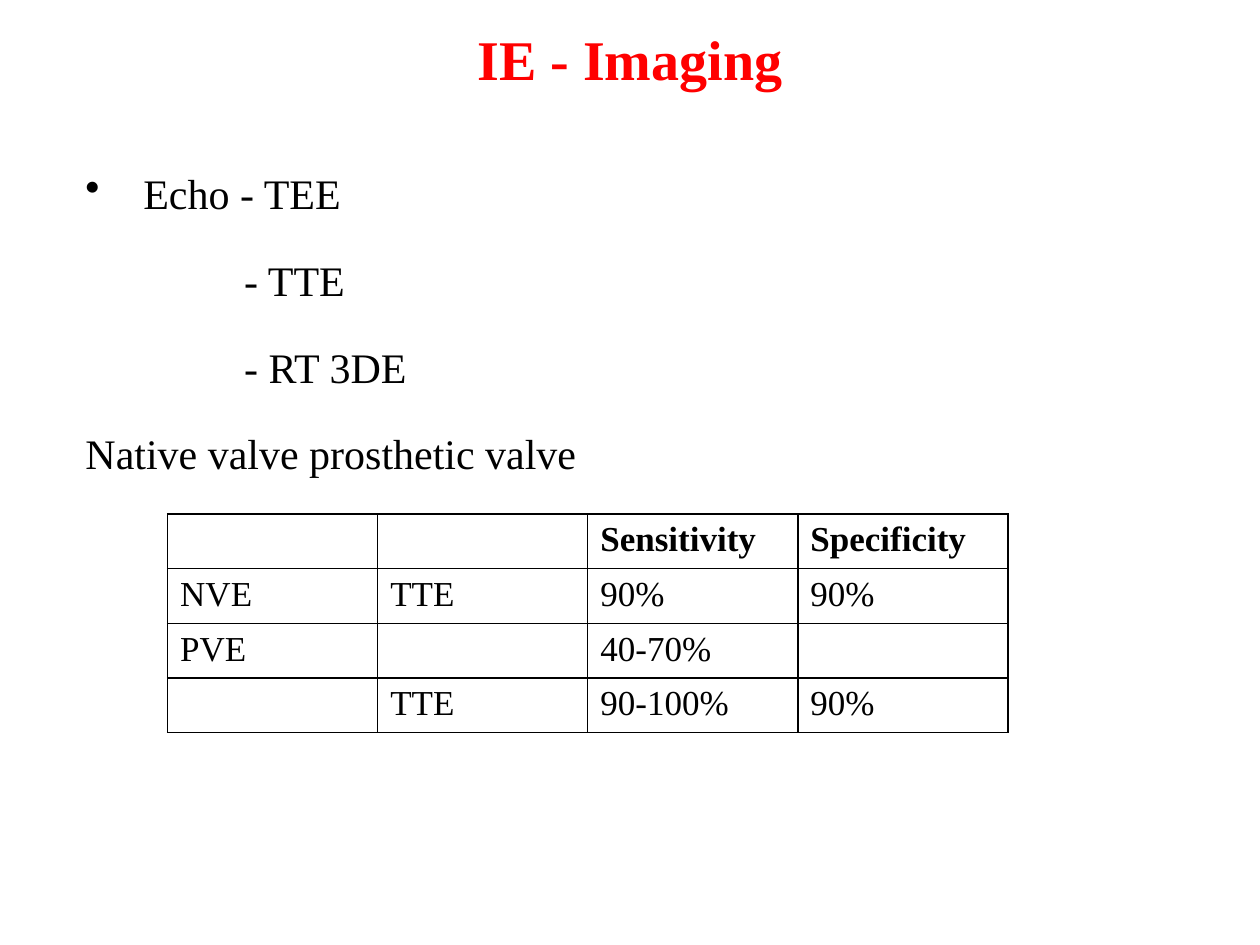
from dataclasses import dataclass

from lxml.etree import SubElement
from pptx import Presentation
from pptx.dml.color import RGBColor
from pptx.enum.text import MSO_ANCHOR, PP_ALIGN
from pptx.oxml.ns import qn
from pptx.util import Inches, Pt


@dataclass(frozen=True)
class Theme:
    font: str = "Times New Roman"
    heading: str = "FF0000"
    ink: str = "000000"
    paper: str = "FFFFFF"
    title_size: float = 32
    body_size: float = 24
    table_size: float = 20
    border_width: float = 1


def write(paragraph, text, *, font, size, color, bold=False,
          align=PP_ALIGN.LEFT, line_spacing=None, space_before=None):
    """Put formatted text in a paragraph."""
    paragraph.alignment = align
    if line_spacing is not None:
        paragraph.line_spacing = line_spacing
    if space_before is not None:
        paragraph.space_before = Pt(space_before)
    run = paragraph.add_run()
    run.text = text
    run.font.name = font
    run.font.size = Pt(size)
    run.font.bold = bold
    run.font.color.rgb = RGBColor.from_string(color)


class SlideBuilder:
    def __init__(self, slide, theme):
        self.slide = slide
        self.theme = theme
        slide.background.fill.solid()
        slide.background.fill.fore_color.rgb = RGBColor.from_string(theme.paper)

    def title(self, text, left, top, width, height):
        heading = self.slide.shapes.title
        heading.left, heading.top = Inches(left), Inches(top)
        heading.width, heading.height = Inches(width), Inches(height)
        heading.text_frame.vertical_anchor = MSO_ANCHOR.MIDDLE
        write(heading.text_frame.paragraphs[0], text, font=self.theme.font,
              size=self.theme.title_size, color=self.theme.heading,
              bold=True, align=PP_ALIGN.CENTER)

    def outline(self, entries, left, top, width, height):
        """Each entry is (text, left indent in inches, bullet or None)."""
        frame = self.slide.shapes.add_textbox(
            Inches(left), Inches(top), Inches(width), Inches(height)).text_frame
        frame.word_wrap = True
        for index, (text, indent, bullet) in enumerate(entries):
            line = frame.add_paragraph() if index else frame.paragraphs[0]
            write(line, text, font=self.theme.font, size=self.theme.body_size,
                  color=self.theme.ink, align=PP_ALIGN.JUSTIFY,
                  line_spacing=1.5, space_before=6.4)
            properties = line._p.get_or_add_pPr()
            properties.set("marL", str(Inches(indent)))
            if bullet:
                properties.set("indent", str(-Inches(indent)))
                SubElement(properties, qn("a:buChar"), char=bullet)

    def table(self, rows, left, top, width, row_height):
        """The first row is the bold header."""
        grid = self.slide.shapes.add_table(
            len(rows), len(rows[0]), Inches(left), Inches(top),
            Inches(width), Inches(row_height * len(rows))).table
        grid.first_row = grid.horz_banding = False
        for row_index, row in enumerate(rows):
            for column_index, text in enumerate(row):
                cell = grid.cell(row_index, column_index)
                self.border(cell)
                cell.fill.solid()
                cell.fill.fore_color.rgb = RGBColor.from_string(self.theme.paper)
                if text:
                    write(cell.text_frame.paragraphs[0], text,
                          font=self.theme.font, size=self.theme.table_size,
                          color=self.theme.ink, bold=row_index == 0)

    def border(self, cell):
        properties = cell._tc.get_or_add_tcPr()
        for side in ("a:lnL", "a:lnR", "a:lnT", "a:lnB"):
            edge = SubElement(properties, qn(side),
                              w=str(Pt(self.theme.border_width)))
            fill = SubElement(edge, qn("a:solidFill"))
            SubElement(fill, qn("a:srgbClr"), val=self.theme.ink)


def main():
    deck = Presentation()
    deck.slide_width, deck.slide_height = Inches(10), Inches(7.5)
    title_only = deck.slide_layouts[5]
    builder = SlideBuilder(deck.slides.add_slide(title_only), Theme())

    # Heading
    builder.title("IE - Imaging", 0.5, 0, 9, 0.92)

    # Echo modalities
    builder.outline([
        ("Echo - TEE", 0.46, "•"),
        ("- TTE", 1.26, None),
        ("- RT 3DE", 1.26, None),
        ("Native valve prosthetic valve", 0, None),
    ], 0.58, 1.08, 9, 6)

    # Diagnostic accuracy by valve type
    builder.table([
        ("", "", "Sensitivity", "Specificity"),
        ("NVE", "TTE", "90%", "90%"),
        ("PVE", "", "40-70%", ""),
        ("", "TTE", "90-100%", "90%"),
    ], 1.33, 4.08, 6.67, 0.41)

    deck.save("out.pptx")


if __name__ == "__main__":
    main()
